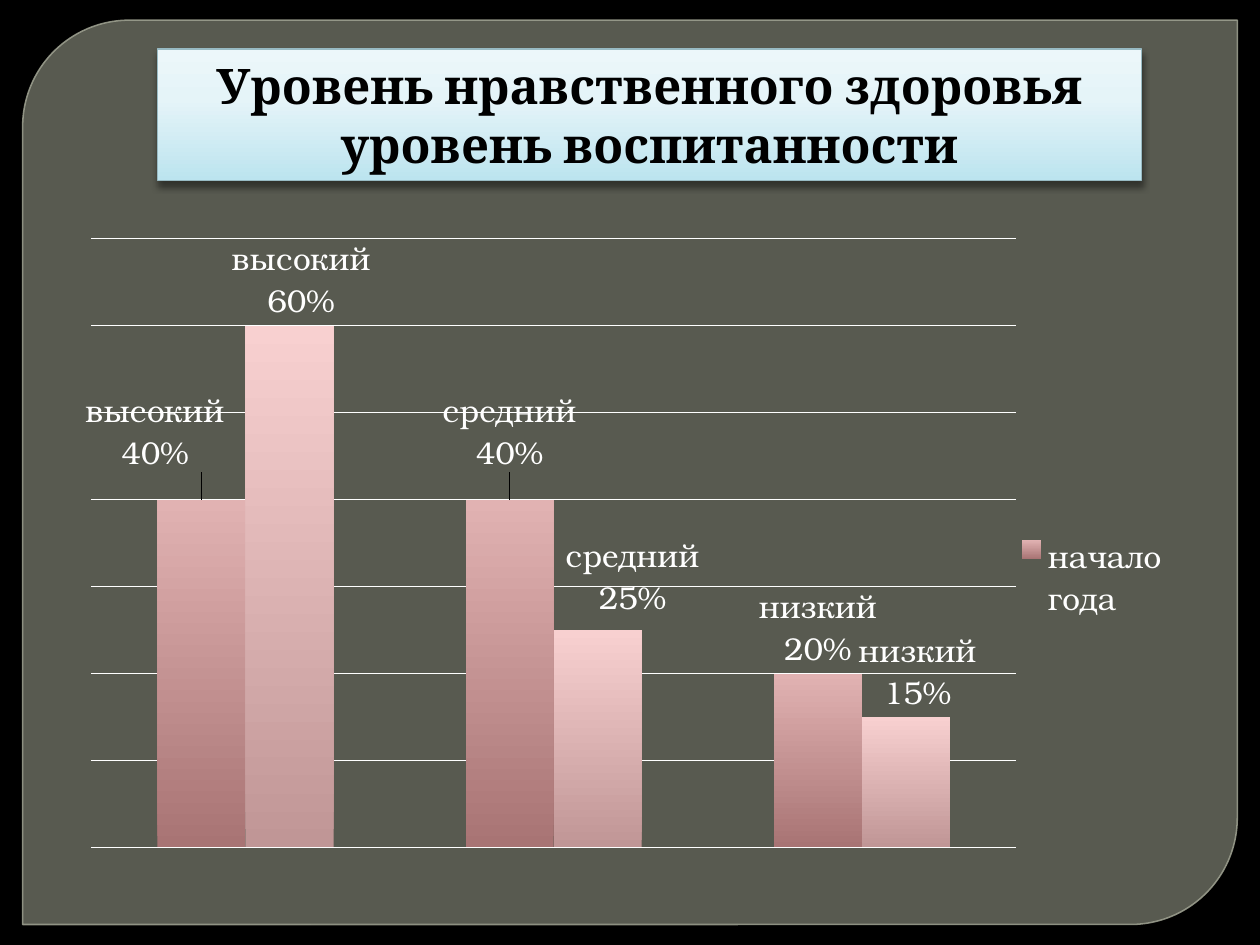
from copy import deepcopy

from lxml import etree
from pptx import Presentation
from pptx.chart.data import CategoryChartData
from pptx.dml.color import RGBColor
from pptx.enum.chart import XL_CHART_TYPE, XL_LABEL_POSITION, XL_LEGEND_POSITION
from pptx.enum.shapes import MSO_SHAPE
from pptx.enum.text import MSO_ANCHOR, PP_ALIGN
from pptx.oxml import parse_xml
from pptx.oxml.ns import nsdecls, qn
from pptx.util import Inches, Pt

color = RGBColor.from_string


def paint_gradient(fill, element, stops):
    """Fill upwards from the bottom edge with (position, colour) stops."""
    fill.gradient()
    fill.gradient_angle = 90
    stop_list = element.find(".//" + qn("a:gsLst"))
    for _ in stops[2:]:
        stop_list.append(deepcopy(stop_list[-1]))
    for stop, (position, shade) in zip(fill.gradient_stops, stops):
        stop.position = position
        stop.color.rgb = color(shade)


def manual_layout(**values):
    """Chart layout element; keyword order follows the schema."""
    items = "".join(f'<c:{key} val="{value}"/>' for key, value in values.items())
    return parse_xml(f'<c:layout {nsdecls("c")}><c:manualLayout>{items}'
                     "</c:manualLayout></c:layout>")


presentation = Presentation()
presentation.slide_width, presentation.slide_height = Inches(10), Inches(7.5)
width, height = presentation.slide_width, presentation.slide_height
slide = presentation.slides.add_slide(presentation.slide_layouts[6])
slide.background.fill.solid()
slide.background.fill.fore_color.rgb = color("000000")

# Panel with two rounded corners
panel = slide.shapes.add_shape(
    MSO_SHAPE.ROUND_2_DIAG_RECTANGLE,
    int(width * 0.018), int(height * 0.0213), int(width * 0.964), int(height * 0.957))
panel.adjustments[0], panel.adjustments[1] = 0.118, 0
panel.shadow.inherit = False
panel.fill.solid()
panel.fill.fore_color.rgb = color("888B7B")
panel.line.color.rgb = color("9DA090")
panel.line.width = Pt(0.87)
for shade, opacity in zip(panel._element.spPr.iter(qn("a:srgbClr")), (65, 88)):
    etree.SubElement(shade, qn("a:alpha")).set("val", str(opacity * 1000))

# Title
title = slide.shapes.add_shape(
    MSO_SHAPE.RECTANGLE,
    int(width * 0.125), int(height * 0.052), int(width * 0.781), int(height * 0.139))
paint_gradient(title.fill, title._element.spPr,
               [(0, "BCE4EF"), (0.62, "E5F4F8"), (1, "ECF7FA")])
title.line.color.rgb = color("98BAC3")
title.line.width = Pt(0.75)
title._element.spPr.append(parse_xml(
    f'<a:effectLst {nsdecls("a")}><a:outerShdw blurRad="{Pt(4)}" dist="{Pt(3)}" '
    'dir="5400000" rotWithShape="0"><a:srgbClr val="000000"><a:alpha val="43000"/>'
    "</a:srgbClr></a:outerShdw></a:effectLst>"))
text_frame = title.text_frame
text_frame.word_wrap = True
text_frame.vertical_anchor = MSO_ANCHOR.MIDDLE
text_frame.text = "Уровень нравственного здоровья\vуровень воспитанности"
paragraph = text_frame.paragraphs[0]
paragraph.alignment = PP_ALIGN.CENTER
for run in paragraph.runs:
    run.font.name, run.font.size, run.font.bold = "Cambria", Pt(28), True
    run.font.color.rgb = color("000000")

# Chart
chart_data = CategoryChartData(number_format="0%")
chart_data.categories = ["высокий", "средний", "низкий"]
chart_data.add_series("начало года", [0.4, 0.4, 0.2])
chart_data.add_series("конец года", [0.6, 0.25, 0.15])
chart = slide.shapes.add_chart(
    XL_CHART_TYPE.COLUMN_CLUSTERED,
    int(width * 0.055), int(height * 0.219), int(width * 0.922), int(height * 0.781),
    chart_data).chart
chart.has_title = False
chart.font.name, chart.font.size = "TeX Gyre Bonum", Pt(18)
chart.font.color.rgb = color("FFFFFF")

chart.category_axis.visible = False
value_axis = chart.value_axis
value_axis.visible = False
value_axis.minimum_scale, value_axis.maximum_scale, value_axis.major_unit = 0, 0.7, 0.1
value_axis.has_major_gridlines = True
value_axis.major_gridlines.format.line.color.rgb = color("FFFFFF")
value_axis.major_gridlines.format.line.width = Pt(1)

plot = chart.plots[0]
plot.gap_width, plot.overlap, plot.vary_by_categories = 150, 0, False
plot_area = chart._chartSpace.chart.plotArea
for layout in plot_area.findall(qn("c:layout")):
    plot_area.remove(layout)
plot_area.insert(0, manual_layout(
    layoutTarget="inner", xMode="edge", yMode="edge", x=0.019, y=0.043, w=0.796, h=0.825))

bar_shades = [("A87474", "E1B2B2"), ("C09696", "F8D0D0")]
label_shifts = [[(-0.04, -0.03), (0, -0.03), (0, 0)],
                [(0.01, 0), (0.03, -0.01), (0.01, 0)]]
for series, (bottom, top), shifts in zip(plot.series, bar_shades, label_shifts):
    paint_gradient(series.format.fill, series._element, [(0, bottom), (1, top)])
    labels = series.data_labels
    labels.show_value = labels.show_category_name = True
    labels.number_format, labels.number_format_is_linked = "0%", False
    labels.position = XL_LABEL_POSITION.OUTSIDE_END
    for index, (x, y) in enumerate(shifts):
        series.points[index].data_label.position = XL_LABEL_POSITION.OUTSIDE_END
    for label, (x, y) in zip(series._element.iter(qn("c:dLbl")), shifts):
        label.find(qn("c:idx")).addnext(manual_layout(x=x, y=y))
        label.find(qn("c:showCatName")).set("val", "1")
        etree.SubElement(label, qn("c:separator")).text = "\n"

# Legend names the first series only
chart.has_legend = True
legend = chart.legend
legend.position = XL_LEGEND_POSITION.RIGHT
legend.include_in_layout = False
for layout in legend._element.findall(qn("c:layout")):
    legend._element.remove(layout)
legend._element.find(qn("c:legendPos")).addnext(manual_layout(
    xMode="edge", yMode="edge", x=0.81, y=0.44, w=0.14, h=0.12))
legend._element.find(qn("c:legendPos")).addnext(parse_xml(
    f'<c:legendEntry {nsdecls("c")}><c:idx val="1"/><c:delete val="1"/></c:legendEntry>'))

presentation.save("out.pptx")
